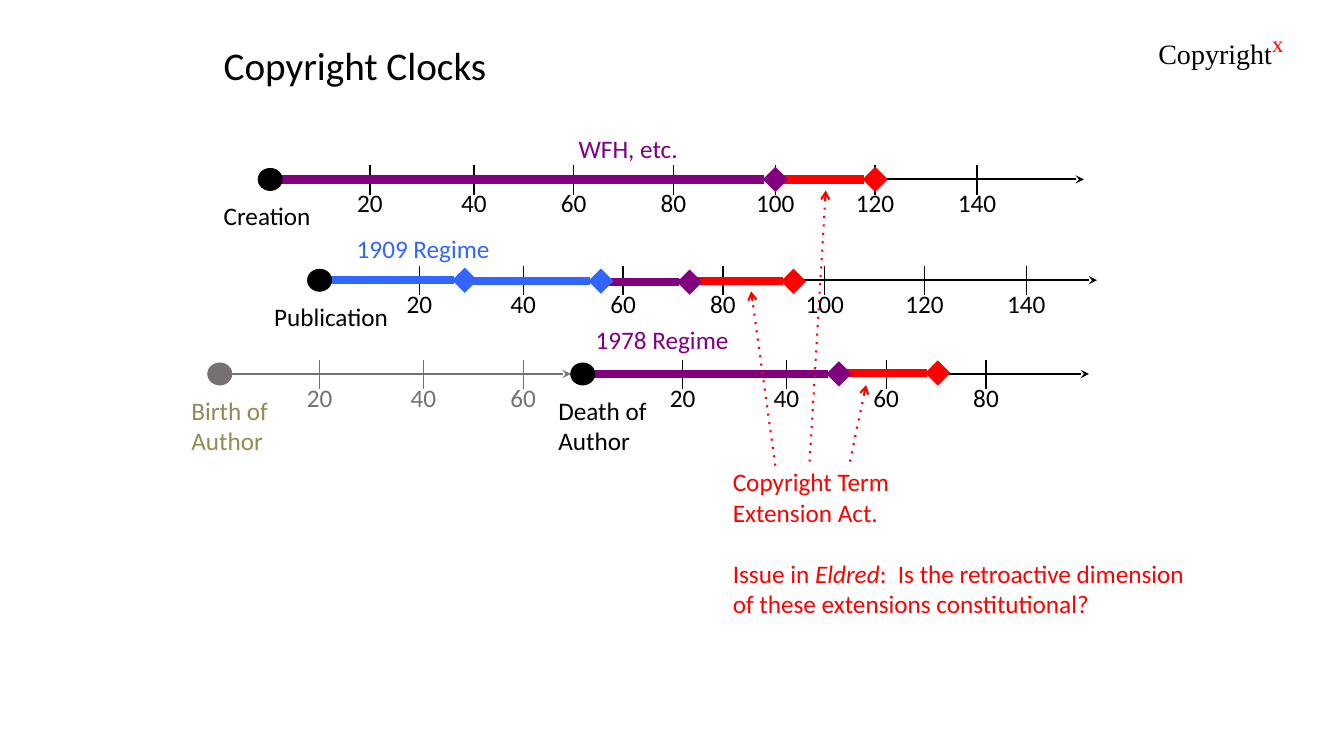
from lxml import etree
from pptx import Presentation
from pptx.dml.color import RGBColor
from pptx.enum.shapes import MSO_CONNECTOR, MSO_SHAPE
from pptx.enum.text import MSO_ANCHOR, PP_ALIGN
from pptx.oxml.ns import qn
from pptx.util import Inches, Pt

LINE, OVAL = MSO_CONNECTOR.STRAIGHT, MSO_SHAPE.OVAL
LEFT, CENTER = PP_ALIGN.LEFT, PP_ALIGN.CENTER
TOP, MIDDLE = MSO_ANCHOR.TOP, MSO_ANCHOR.MIDDLE

BLACK = RGBColor(0x00, 0x00, 0x00)
GRAY = RGBColor(0x76, 0x71, 0x71)
OLIVE = RGBColor(0x94, 0x8A, 0x54)
BLUE = RGBColor(0x33, 0x66, 0xFF)
PURPLE = RGBColor(0x80, 0x00, 0x80)
RED = RGBColor(0xFF, 0x00, 0x00)

# Content: each clock starts at an event and counts years in twenties
# (event lines, event left, event colour, start x, axis y, axis end, ticks, axis colour)
CLOCKS = [
    (["Death of", "Author"], 5.44, BLACK, 5.78, 3.71, 10.8, 4, BLACK),
    (["Publication"], 2.62, BLACK, 3.17, 2.78, 10.88, 7, BLACK),
    (["Creation"], 2.12, BLACK, 2.68, 1.78, 10.75, 7, BLACK),
    (["Birth of", "Author"], 1.8, OLIVE, 2.18, 3.71, 5.66, 3, GRAY),
]
TICK_OFFSETS = [0.99, 2.02, 3.01, 4.0, 5.01, 6.0, 7.01]
YEARS_PER_TICK = 20

# Terms of protection: (from x, to x, y, colour)
TERMS = [
    (3.26, 4.61, 2.78, BLUE),
    (7.66, 8.68, 1.78, RED),
    (6.84, 7.87, 2.79, RED),
    (8.27, 9.3, 3.7, RED),
    (5.81, 8.32, 3.71, PURPLE),
    (5.96, 6.84, 2.8, PURPLE),
    (2.71, 7.69, 1.78, PURPLE),
    (4.61, 5.96, 2.79, BLUE),
]
REGIMES = [
    ("WFH, etc.", 5.64, 1.27, PURPLE),
    ("1909 Regime", 3.44, 2.27, BLUE),
    ("1978 Regime", 5.81, 3.17, PURPLE),
]
# Pointers from the extension act to the red terms
POINTERS = [
    (8.43, 4.58, 8.59, 3.82),
    (8.03, 4.58, 8.19, 1.89),
    (7.69, 4.62, 7.45, 2.89),
]
ACT = ["Copyright Term", "Extension Act."]
ISSUE = [
    [("Issue in ", False), ("Eldred", True), (":  Is the retroactive dimension", False)],
    [("of these extensions constitutional?", False)],
]

prs = Presentation()
prs.slide_width, prs.slide_height = Inches(13.33), Inches(7.5)
s = prs.slides.add_slide(prs.slide_layouts[6])


def add_run(p, text, color, size=18, font="Calibri", italic=False):
    r = p.add_run()
    r.text = text
    r.font.size, r.font.name, r.font.italic = Pt(size), font, italic
    r.font.color.rgb = color
    return r


def add_box(x, y, w, h, lines=(), color=BLACK, size=18, align=LEFT, anchor=TOP):
    tf = s.shapes.add_textbox(Inches(x), Inches(y), Inches(w), Inches(h)).text_frame
    tf.word_wrap, tf.vertical_anchor = True, anchor
    for i, text in enumerate(lines):
        p = tf.add_paragraph() if i else tf.paragraphs[0]
        p.alignment = align
        add_run(p, text, color, size)
    return tf


def add_line(x1, y1, x2, y2, color, width, end=None, dash=None):
    c = s.shapes.add_connector(LINE, Inches(x1), Inches(y1), Inches(x2), Inches(y2))
    c.line.color.rgb, c.line.width = color, Pt(width)
    ln = c.line._get_or_add_ln()
    if dash:
        etree.SubElement(ln, qn("a:prstDash"), val=dash)
    if end:
        etree.SubElement(ln, qn("a:tailEnd"), type=end)
    etree.SubElement(c._element.spPr, qn("a:effectLst"))


# Heading and course name
tf = add_box(2.12, 0.15, 9.02, 1.05, ["Copyright Clocks"], size=28, anchor=MIDDLE)
tf.paragraphs[0].line_spacing = 0.9
p = add_box(11.39, 0.2, 1.6, 0.44).paragraphs[0]
add_run(p, "Copyright", BLACK, 20, "Times New Roman")
r = add_run(p, "x", RED, 28, "Times New Roman")
r.font._element.set("baseline", "30000")

# Axes with ticks, year labels and starting events
for event, left, event_color, x, y, end, ticks, color in CLOCKS:
    add_line(x, y, end, y, color, 1.5, "stealth")
    for i, offset in enumerate(TICK_OFFSETS[:ticks], 1):
        tick = x + offset
        add_line(tick, y - 0.14, tick, y + 0.15, color, 1)
        add_box(tick - 0.4, y + 0.03, 0.8, 0.4, [str(i * YEARS_PER_TICK)], color, align=CENTER)
    add_box(left, y + 0.16, 1.5, 0.36 * len(event), event, event_color)

# Terms and regimes
for x1, x2, y, color in TERMS:
    add_line(x1, y, x2, y, color, 6, "diamond")
for text, x, y, color in REGIMES:
    add_box(x, y, 1.8, 0.4, [text], color)

# Starting dots
for *_, x, y, end, ticks, color in CLOCKS:
    sp = s.shapes.add_shape(OVAL, Inches(x - 0.12), Inches(y - 0.11), Inches(0.24), Inches(0.22))
    sp.shadow.inherit = False
    sp.fill.solid()
    sp.fill.fore_color.rgb = sp.line.color.rgb = color
    sp.line.width = Pt(0.5)

# Extension act, its issue and pointers
tf = add_box(7.17, 4.58, 4.9, 1.62, ACT, RED)
for i, runs in enumerate(ISSUE):
    p = tf.add_paragraph()
    p.space_before = Pt(0 if i else 22)
    for text, italic in runs:
        add_run(p, text, RED, italic=italic)
for pointer in POINTERS:
    add_line(*pointer, RED, 1.5, "arrow", "dot")

prs.save("out.pptx")
